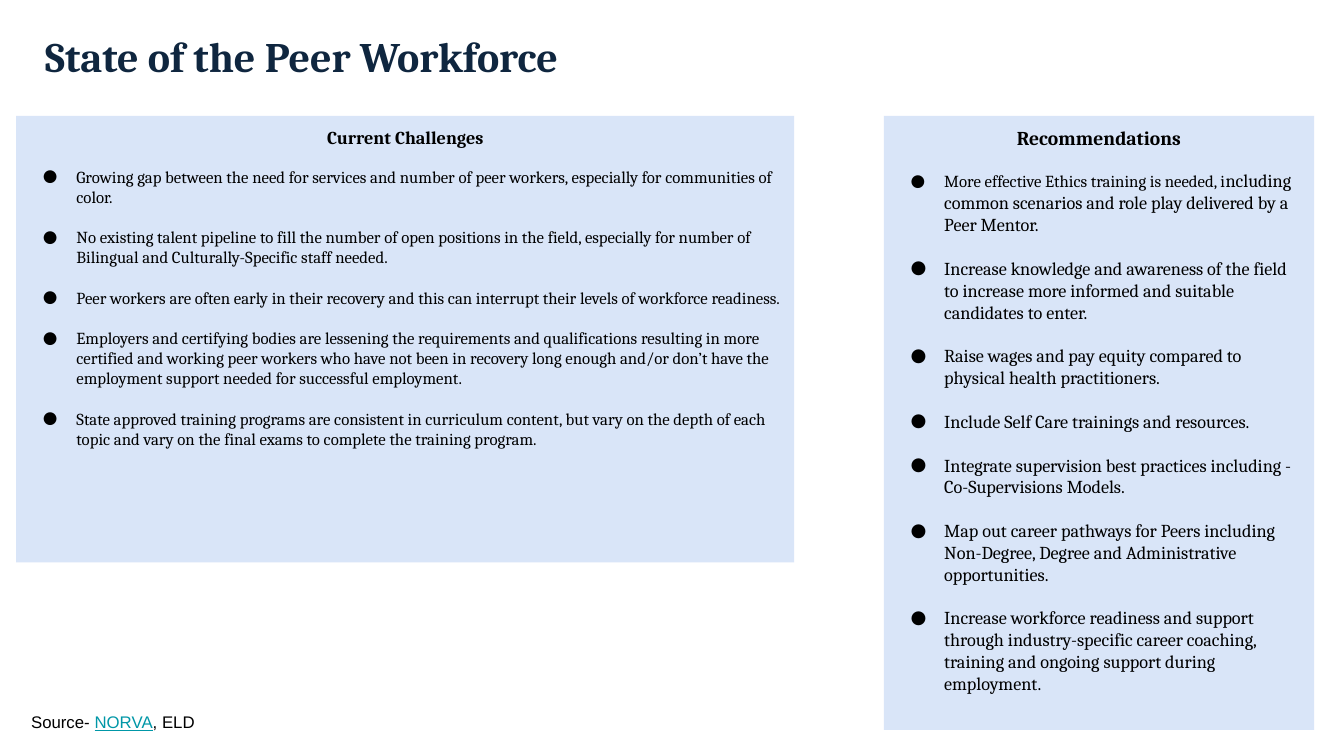
from dataclasses import dataclass

from lxml import etree
from pptx import Presentation
from pptx.dml.color import RGBColor
from pptx.enum.shapes import MSO_SHAPE
from pptx.enum.text import MSO_ANCHOR, PP_ALIGN
from pptx.oxml.ns import qn
from pptx.util import Pt

RECT = MSO_SHAPE.RECTANGLE
TOP = MSO_ANCHOR.TOP
LEFT, CENTER = PP_ALIGN.LEFT, PP_ALIGN.CENTER


@dataclass(frozen=True)
class Theme:
    serif: str = "Cambria"
    sans: str = "Arial"
    ink: str = "000000"
    title: str = "0F263F"
    panel: str = "D9E5F8"
    link: str = "0097A7"
    title_size: int = 30
    source_size: int = 12
    inset: float = 7.2
    indent: int = 36
    hanging: int = 24
    line: float = 1.2  # height of one text line relative to its type size


THEME = Theme()

CHALLENGES = [
    "Growing gap between the need for services and number of peer workers, "
    "especially for communities of color.",
    "No existing talent pipeline to fill the number of open positions in the field, "
    "especially for number of Bilingual and Culturally-Specific staff needed.",
    "Peer workers are often early in their recovery and this can interrupt "
    "their levels of workforce readiness.",
    "Employers and certifying bodies are lessening the requirements and qualifications "
    "resulting in more certified and working peer workers who have not been in recovery "
    "long enough and/or don’t have the employment support needed for successful employment.",
    "State approved training programs are consistent in curriculum content, but vary on "
    "the depth of each topic and vary on the final exams to complete the training program.",
]
# A tuple holds a smaller opening run and the rest of the item
RECOMMENDATIONS = [
    ("More effective Ethics training is needed, i",
     "ncluding common scenarios and role play delivered by a Peer Mentor."),
    "Increase knowledge and awareness of the field to increase more informed "
    "and suitable candidates to enter.",
    "Raise wages and pay equity compared to physical health practitioners.",
    "Include Self Care trainings and resources.",
    "Integrate supervision best practices including - Co-Supervisions Models.",
    "Map out career pathways for Peers including Non-Degree, Degree and "
    "Administrative opportunities.",
    "Increase workforce readiness and support through industry-specific career "
    "coaching, training and ongoing support during employment.",
]


def add_run(p, text, size, font=THEME.serif, color=THEME.ink, bold=False, underline=False):
    r = p.add_run()
    r.text = text
    r.font.name = font
    r.font.size = Pt(size)
    r.font.bold = bold
    r.font.underline = underline
    r.font.color.rgb = RGBColor.from_string(color)


def set_frame(tf):
    tf.word_wrap = True
    tf.vertical_anchor = TOP
    tf.margin_left = tf.margin_right = Pt(THEME.inset)
    tf.margin_top = tf.margin_bottom = Pt(THEME.inset)


def add_text(s, box):
    tf = s.shapes.add_textbox(*map(Pt, box)).text_frame
    set_frame(tf)
    return tf.paragraphs[0]


def add_bullet(p):
    pPr = p._p.get_or_add_pPr()
    pPr.set("marL", str(Pt(THEME.indent)))
    pPr.set("indent", str(Pt(-THEME.hanging)))
    color = etree.SubElement(pPr, qn("a:buClr"))
    etree.SubElement(color, qn("a:srgbClr"), val=THEME.ink)
    etree.SubElement(pPr, qn("a:buFont"), typeface=THEME.serif)
    etree.SubElement(pPr, qn("a:buChar"), char="●")


# Title
def add_title(s, box):
    p = add_text(s, box)
    p.line_spacing = 0.9
    add_run(p, "State of the Peer Workforce", THEME.title_size, color=THEME.title, bold=True)


# Panel with a centred heading and a bullet list
def add_panel(s, box, heading, items, size):
    sp = s.shapes.add_shape(RECT, *map(Pt, box))
    sp.shadow.inherit = False
    sp.fill.solid()
    sp.fill.fore_color.rgb = RGBColor.from_string(THEME.panel)
    sp.line.fill.background()
    tf = sp.text_frame
    set_frame(tf)

    p = tf.paragraphs[0]
    p.alignment = CENTER
    add_run(p, heading, size + 1, bold=True)

    for i, item in enumerate(items):
        p = tf.add_paragraph()
        p.alignment = LEFT
        # One line between items, slightly less below the heading
        p.space_before = Pt(THEME.line * (size if i else size - 1))
        add_bullet(p)
        if isinstance(item, tuple):
            opening, rest = item
            add_run(p, opening, size - 1)
            add_run(p, rest, size)
        else:
            add_run(p, item, size)


# Source line
def add_source(s, box):
    p = add_text(s, box)
    add_run(p, "Source- ", THEME.source_size, THEME.sans)
    add_run(p, "NORVA", THEME.source_size, THEME.sans, THEME.link, underline=True)
    add_run(p, ", ELD", THEME.source_size, THEME.sans)


def main():
    prs = Presentation()
    prs.slide_width, prs.slide_height = Pt(960), Pt(540)
    s = prs.slides.add_slide(prs.slide_layouts[6])

    panel_top = 82.8
    add_source(s, (15.1, 501.1, 709.2, 28.8))
    add_title(s, (25.2, 18.7, 714.2, 47.5))
    add_panel(s, (11.5, panel_top, 555.8, 319), "Current Challenges", CHALLENGES, 12)
    add_panel(s, (631.4, panel_top, 307.4, 438.5), "Recommendations", RECOMMENDATIONS, 13)
    prs.save("out.pptx")


if __name__ == "__main__":
    main()
